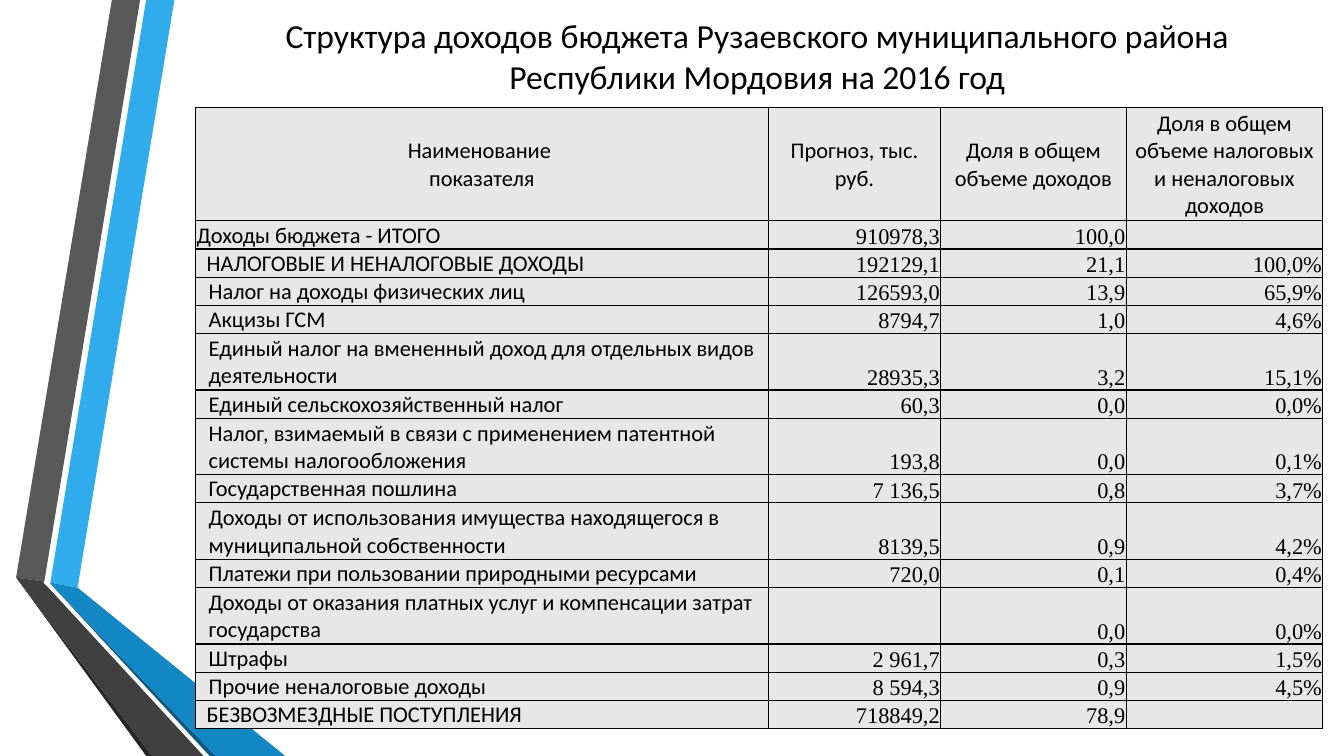
from lxml.etree import SubElement
from pptx import Presentation
from pptx.dml.color import RGBColor
from pptx.enum.text import MSO_ANCHOR as ANCHOR, PP_ALIGN as ALIGN
from pptx.oxml.ns import qn
from pptx.util import Pt

PX = 9144  # EMU, 100 px to the inch
BODY, DIGITS = "Calibri", "Times New Roman"
INK, CELL_FILL = "000000", "E7E7E7"

RIBBONS = [
    ("30ACEC", [(50, 578), (77, 583), (173, 0), (145, 0)]),
    ("595959", [(139, 0), (111, 0), (16, 573), (44, 577)]),
    ("262626", [(16, 573), (145, 750), (151, 750)]),
    ("0C5A82", [(50, 579), (208, 750), (214, 750)]),
    ("1287C3", [(50, 579), (214, 750), (283, 750), (77, 583), (50, 578)]),
    ("404040", [(202, 750), (48, 583), (43, 578), (44, 577), (16, 573), (151, 750)]),
]

TITLE = ("Структура доходов бюджета Рузаевского муниципального района "
         "Республики Мордовия на 2016 год")
COL_WIDTHS = [568, 171, 184, 195]
HEADER_HEIGHT, LINE_HEIGHT = 112, 28
HEADER = ["Наименование \nпоказателя", "Прогноз, тыс. руб.",
          "Доля в общем объеме доходов",
          "Доля в общем объеме налоговых и неналоговых доходов"]

# Left inset of the name for each level of the budget
TOTAL, GROUP, ITEM = 1, 11, 13
# level, lines of text, name, forecast, share of all income, share of own income
INCOME = [
    (TOTAL, 1, "Доходы бюджета - ИТОГО", "910978,3", "100,0", ""),
    (GROUP, 1, "НАЛОГОВЫЕ И НЕНАЛОГОВЫЕ ДОХОДЫ", "192129,1", "21,1", "100,0%"),
    (ITEM, 1, "Налог на доходы физических лиц", "126593,0", "13,9", "65,9%"),
    (ITEM, 1, "Акцизы ГСМ", "8794,7", "1,0", "4,6%"),
    (ITEM, 2, "Единый налог на вмененный доход для отдельных видов деятельности",
     "28935,3", "3,2", "15,1%"),
    (ITEM, 1, "Единый сельскохозяйственный налог", "60,3", "0,0", "0,0%"),
    (ITEM, 2, "Налог, взимаемый в связи с применением патентной системы налогообложения",
     "193,8", "0,0", "0,1%"),
    (ITEM, 1, "Государственная пошлина", "7 136,5", "0,8", "3,7%"),
    (ITEM, 2, "Доходы от использования имущества находящегося в муниципальной собственности",
     "8139,5", "0,9", "4,2%"),
    (ITEM, 1, "Платежи при пользовании природными ресурсами", "720,0", "0,1", "0,4%"),
    (ITEM, 2, "Доходы от оказания платных услуг и компенсации затрат государства",
     "", "0,0", "0,0%"),
    (ITEM, 1, "Штрафы", "2 961,7", "0,3", "1,5%"),
    (ITEM, 1, "Прочие неналоговые доходы", "8 594,3", "0,9", "4,5%"),
    (GROUP, 1, "БЕЗВОЗМЕЗДНЫЕ ПОСТУПЛЕНИЯ", "718849,2", "78,9", ""),
]


def px(*lengths):
    return [n * PX for n in lengths]


def rgb(color):
    return RGBColor.from_string(color)


def put_text(tf, text, size=16, font=BODY, color=INK, align=ALIGN.LEFT):
    p = tf.paragraphs[0]
    p.alignment = align
    if not text:  # an empty cell still needs its size to keep the row low
        p._p.get_or_add_endParaRPr().set("sz", str(size * 100))
        return
    for i, line in enumerate(text.split("\n")):
        if i:
            p.add_line_break()
        r = p.add_run()
        r.text = line
        r.font.size = Pt(size)
        r.font.name = font
        r.font.color.rgb = rgb(color)


def add_ribbon(s, color, points):
    builder = s.shapes.build_freeform(*points[0], scale=PX)
    builder.add_line_segments(points[1:], close=True)
    sp = builder.convert_to_shape()
    sp.shadow.inherit = False
    sp.fill.solid()
    sp.fill.fore_color.rgb = rgb(color)
    sp.line.fill.background()


def add_title(s):
    tf = s.shapes.add_textbox(*px(189, 13, 1124, 84)).text_frame
    tf.word_wrap = True
    tf.vertical_anchor = ANCHOR.MIDDLE
    put_text(tf, TITLE, size=24, align=ALIGN.CENTER)


def set_borders(cell, color=INK, width=1):
    tc_pr = cell._tc.get_or_add_tcPr()
    for side in ("a:lnL", "a:lnR", "a:lnT", "a:lnB"):
        ln = SubElement(tc_pr, qn(side), w=str(Pt(width)))
        fill = SubElement(ln, qn("a:solidFill"))
        SubElement(fill, qn("a:srgbClr"), val=color)


def fill_cell(cell, text, inset=1, anchor=ANCHOR.BOTTOM, **text_format):
    set_borders(cell)
    cell.fill.solid()
    cell.fill.fore_color.rgb = rgb(CELL_FILL)
    cell.vertical_anchor = anchor
    cell.margin_left, cell.margin_right, cell.margin_top, cell.margin_bottom = px(inset, 1, 1, 0)
    put_text(cell.text_frame, text, **text_format)


def add_income_table(s):
    heights = [HEADER_HEIGHT] + [row[1] * LINE_HEIGHT for row in INCOME]
    frame = s.shapes.add_table(len(heights), len(COL_WIDTHS),
                               *px(194, 107, sum(COL_WIDTHS), sum(heights)))
    table = frame.table
    table.first_row = table.horz_banding = False
    for col, width in zip(table.columns, COL_WIDTHS):
        col.width = width * PX
    for row, height in zip(table.rows, heights):
        row.height = height * PX

    for c, label in enumerate(HEADER):
        fill_cell(table.cell(0, c), label, anchor=ANCHOR.MIDDLE, align=ALIGN.CENTER)
    for r, (inset, _, name, *values) in enumerate(INCOME, 1):
        fill_cell(table.cell(r, 0), name, inset=inset)
        for c, value in enumerate(values, 1):
            fill_cell(table.cell(r, c), value, font=DIGITS, align=ALIGN.RIGHT)


def main():
    prs = Presentation()
    prs.slide_width, prs.slide_height = px(1333, 750)
    s = prs.slides.add_slide(prs.slide_layouts[6])
    for color, points in RIBBONS:
        add_ribbon(s, color, points)
    add_title(s)
    add_income_table(s)
    prs.save("out.pptx")


if __name__ == "__main__":
    main()
